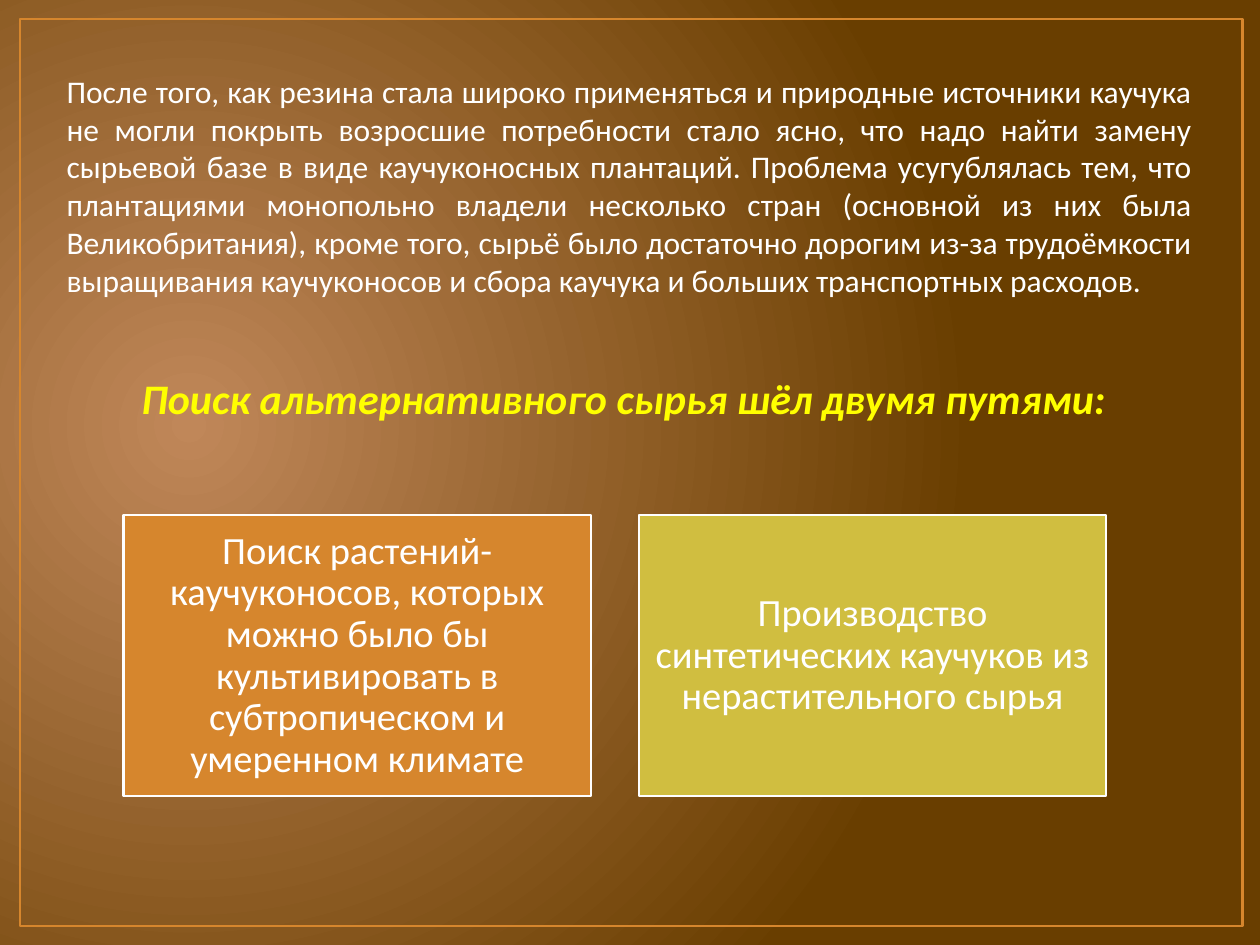
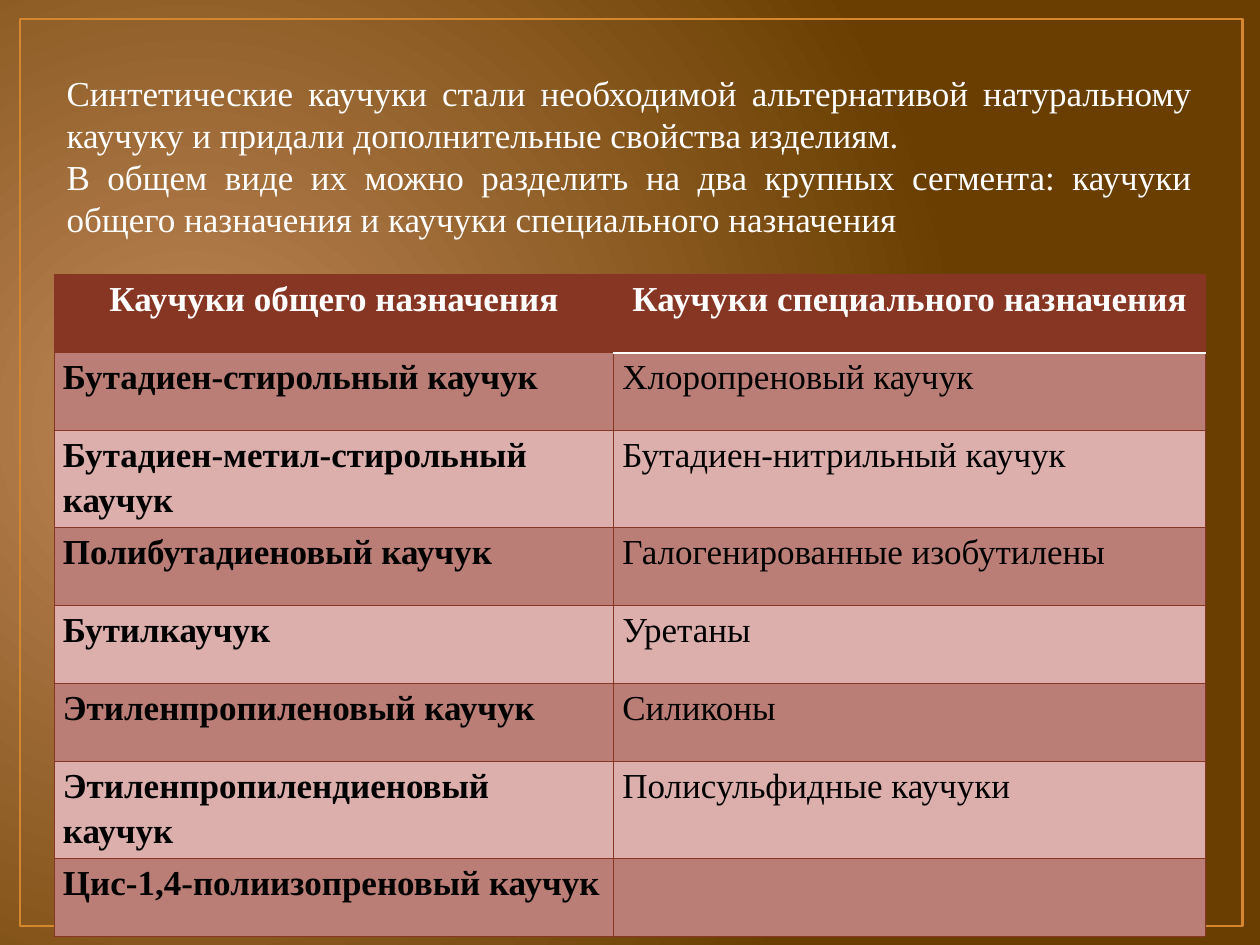
from dataclasses import dataclass

from lxml import etree
from pptx import Presentation
from pptx.dml.color import RGBColor
from pptx.enum.shapes import MSO_SHAPE
from pptx.enum.text import MSO_ANCHOR, MSO_AUTO_SIZE, PP_ALIGN
from pptx.oxml.ns import qn
from pptx.util import Inches, Pt

RECTANGLE = MSO_SHAPE.RECTANGLE
MIDDLE = MSO_ANCHOR.MIDDLE
GROW = MSO_AUTO_SIZE.SHAPE_TO_FIT_TEXT
CENTER, JUSTIFY = PP_ALIGN.CENTER, PP_ALIGN.JUSTIFY
BLANK_LAYOUT = 6


@dataclass(frozen=True)
class Theme:
    glow: str = "C08759"
    ground: str = "693E00"
    orange: str = "D6862D"
    lime: str = "D0BE40"
    white: str = "FFFFFF"
    black: str = "000000"
    yellow: str = "FFFF00"
    maroon: str = "873624"
    band_dark: str = "BA7E76"
    band_light: str = "DCAFAD"
    sans: str = "Calibri"
    serif: str = "Times New Roman"
    intro_size: int = 18
    table_size: int = 20
    card_size: int = 22
    heading_size: int = 24


class DeckBuilder:
    """Holds the theme and the current slide."""

    def __init__(self, theme):
        self.theme = theme
        self.deck = Presentation()
        self.deck.slide_width, self.deck.slide_height = Inches(10), Inches(7.5)
        self.page = None
        self.paint_background()

    def paint_background(self):
        """Give the master a circular gradient that every slide inherits."""
        master = self.deck.slide_master
        fill = master.background.fill
        fill.gradient()
        for stop, color in zip(fill.gradient_stops, (self.theme.glow, self.theme.ground)):
            stop.color.rgb = RGBColor.from_string(color)
        gradient = master.element.find(".//" + qn("a:gradFill"))
        gradient.remove(gradient.find(qn("a:lin")))
        circle = etree.SubElement(gradient, qn("a:path"), path="circle")
        etree.SubElement(circle, qn("a:fillToRect"), l="15000", t="50000", r="85000", b="60000")

    def new_page(self):
        self.page = self.deck.slides.add_slide(self.deck.slide_layouts[BLANK_LAYOUT])
        self.rectangle(0.16, 0.15, 9.7, 7.2, None, self.theme.orange, 1.5)

    def rectangle(self, left, top, width, height, fill, line, weight):
        box = self.page.shapes.add_shape(
            RECTANGLE, Inches(left), Inches(top), Inches(width), Inches(height))
        box.shadow.inherit = False
        if fill:
            box.fill.solid()
            box.fill.fore_color.rgb = RGBColor.from_string(fill)
        else:
            box.fill.background()
        box.line.color.rgb = RGBColor.from_string(line)
        box.line.width = Pt(weight)
        return box

    def fill_frame(self, frame, texts, font, size, color, align, spacing=None,
                   bold=False, italic=False):
        """Fill a text frame with one paragraph per text."""
        for index, text in enumerate(texts):
            para = frame.add_paragraph() if index else frame.paragraphs[0]
            para.alignment = align
            if spacing:
                para.line_spacing = spacing
            span = para.add_run()
            span.text = text
            span.font.name, span.font.size = font, Pt(size)
            span.font.bold, span.font.italic = bold, italic
            span.font.color.rgb = RGBColor.from_string(color)

    def text(self, left, top, width, height, texts, font, size, color, align, **style):
        box = self.page.shapes.add_textbox(
            Inches(left), Inches(top), Inches(width), Inches(height))
        frame = box.text_frame
        frame.word_wrap = True
        frame.auto_size = GROW
        self.fill_frame(frame, texts, font, size, color, align, **style)

    def card(self, left, top, width, height, text, fill):
        theme = self.theme
        box = self.rectangle(left, top, width, height, fill, theme.white, 1.25)
        frame = box.text_frame
        frame.word_wrap = True
        frame.vertical_anchor = MIDDLE
        frame.margin_left = frame.margin_right = Inches(0.09)
        frame.margin_top = frame.margin_bottom = Inches(0.09)
        self.fill_frame(frame, [text], theme.sans, theme.card_size, theme.white, CENTER,
                        spacing=0.9)

    def border(self, cell, **edges):
        """Draw cell edges; each value is a (color, points) pair."""
        properties = cell._tc.get_or_add_tcPr()
        for position, side in enumerate("LRTB"):
            color, weight = edges[side]
            line = etree.Element(qn("a:ln" + side), w=str(int(Pt(weight))))
            solid = etree.SubElement(line, qn("a:solidFill"))
            etree.SubElement(solid, qn("a:srgbClr"), val=color)
            properties.insert(position, line)

    def table(self, left, top, widths, row_height, rows):
        theme = self.theme
        table = self.page.shapes.add_table(
            len(rows), len(widths), Inches(left), Inches(top),
            Inches(sum(widths)), Inches(row_height * len(rows))).table
        table.horz_banding = False
        for column, width in zip(table.columns, widths):
            column.width = Inches(width)
        thin, rule = (theme.maroon, 0.75), (theme.white, 1.25)
        for row_index, row in enumerate(rows):
            table.rows[row_index].height = Inches(row_height)
            header = row_index == 0
            band = theme.band_dark if row_index % 2 else theme.band_light
            for column_index, text in enumerate(row):
                cell = table.cell(row_index, column_index)
                cell.margin_left = cell.margin_right = Inches(0.07)
                cell.margin_top = cell.margin_bottom = 0
                cell.fill.solid()
                cell.fill.fore_color.rgb = RGBColor.from_string(theme.maroon if header else band)
                # The white rule runs under the second heading only
                second = column_index == 1
                self.border(cell, L=thin, R=thin,
                            T=rule if second and row_index == 1 else thin,
                            B=rule if second and header else thin)
                if text:
                    self.fill_frame(cell.text_frame, [text], theme.serif, theme.table_size,
                                    theme.white if header else theme.black,
                                    CENTER if header else JUSTIFY,
                                    spacing=1.15, bold=header or not second)


def build_search_page(builder):
    theme = builder.theme
    builder.new_page()
    # Background story
    builder.text(0.43, 0.52, 9.13, 1.92, [
        "После того, как резина стала широко применяться и природные источники каучука "
        "не могли покрыть возросшие потребности стало ясно, что надо найти замену "
        "сырьевой базе в виде каучуконосных плантаций. Проблема усугублялась тем, что "
        "плантациями монопольно владели несколько стран (основной из них была "
        "Великобритания), кроме того, сырьё было достаточно дорогим из-за трудоёмкости "
        "выращивания каучуконосов и сбора каучука и больших транспортных расходов.",
    ], theme.sans, theme.intro_size, theme.white, JUSTIFY)
    builder.text(0.37, 2.91, 9.16, 0.5, ["Поиск альтернативного сырья шёл двумя путями:"],
                 theme.sans, theme.heading_size, theme.yellow, CENTER, bold=True, italic=True)
    # Two ways side by side
    ways = [
        ("Поиск растений-каучуконосов, которых можно было бы культивировать в "
         "субтропическом и умеренном климате", theme.orange),
        ("Производство синтетических каучуков из нерастительного сырья", theme.lime),
    ]
    width, gap = 3.71, 0.38
    for index, (text, fill) in enumerate(ways):
        builder.card(0.98 + index * (width + gap), 4.09, width, 2.23, text, fill)


def build_segments_page(builder):
    theme = builder.theme
    builder.new_page()
    builder.text(0.43, 0.52, 9.13, 1.45, [
        "Синтетические каучуки стали необходимой альтернативой натуральному каучуку "
        "и придали дополнительные свойства изделиям.",
        "В общем виде их можно разделить на два крупных сегмента: каучуки общего "
        "назначения и каучуки специального назначения",
    ], theme.serif, theme.table_size, theme.white, JUSTIFY)
    # Rubber types by segment
    builder.table(0.43, 2.18, [4.44, 4.7], 0.62, [
        ("Каучуки общего назначения", "Каучуки специального назначения"),
        ("Бутадиен-стирольный каучук", "Хлоропреновый каучук"),
        ("Бутадиен-метил-стирольный каучук", "Бутадиен-нитрильный каучук"),
        ("Полибутадиеновый каучук", "Галогенированные изобутилены"),
        ("Бутилкаучук", "Уретаны"),
        ("Этиленпропиленовый каучук", "Силиконы"),
        ("Этиленпропилендиеновый каучук", "Полисульфидные каучуки"),
        ("Цис-1,4-полиизопреновый каучук", ""),
    ])


def main():
    builder = DeckBuilder(Theme())
    build_search_page(builder)
    build_segments_page(builder)
    builder.deck.save("out.pptx")


if __name__ == "__main__":
    main()
